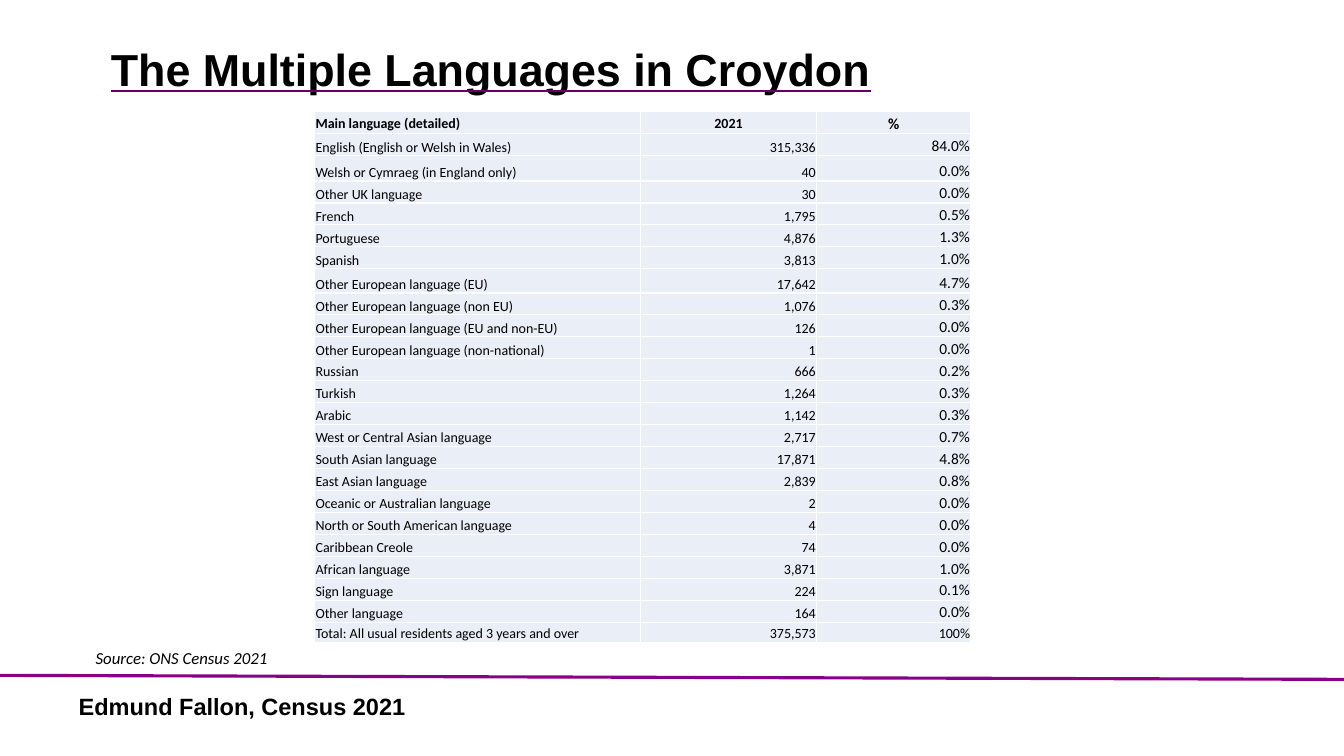
from lxml.etree import SubElement
from pptx import Presentation
from pptx.dml.color import RGBColor
from pptx.enum.shapes import MSO_CONNECTOR
from pptx.enum.text import MSO_ANCHOR as Anchor, MSO_AUTO_SIZE as AutoSize, PP_ALIGN as Align
from pptx.oxml.ns import qn
from pptx.util import Inches, Pt

COLOURS = {
    "text": "000000",
    "rule": "880088",
    "underline": "660066",
    "cell": "EAEFF7",
    "border": "FFFFFF",
}

HEADINGS = ("Main language (detailed)", "2021", "%")
LANGUAGES = [
    ("English (English or Welsh in Wales)", "315,336", "84.0%"),
    ("Welsh or Cymraeg (in England only)", "40", "0.0%"),
    ("Other UK language", "30", "0.0%"),
    ("French", "1,795", "0.5%"),
    ("Portuguese", "4,876", "1.3%"),
    ("Spanish", "3,813", "1.0%"),
    ("Other European language (EU)", "17,642", "4.7%"),
    ("Other European language (non EU)", "1,076", "0.3%"),
    ("Other European language (EU and non-EU)", "126", "0.0%"),
    ("Other European language (non-national)", "1", "0.0%"),
    ("Russian", "666", "0.2%"),
    ("Turkish", "1,264", "0.3%"),
    ("Arabic", "1,142", "0.3%"),
    ("West or Central Asian language", "2,717", "0.7%"),
    ("South Asian language", "17,871", "4.8%"),
    ("East Asian language", "2,839", "0.8%"),
    ("Oceanic or Australian language", "2", "0.0%"),
    ("North or South American language", "4", "0.0%"),
    ("Caribbean Creole", "74", "0.0%"),
    ("African language", "3,871", "1.0%"),
    ("Sign language", "224", "0.1%"),
    ("Other language", "164", "0.0%"),
]
TOTAL = ("Total: All usual residents aged 3 years and over", "375,573", "100%")

COLUMN_WIDTHS = (3.23, 1.75, 1.53)
TABLE_HEIGHT = 5.27
SPECIAL_ROW_HEIGHTS = {2: 0.25, 7: 0.24, 23: 0.2}


def colour(name):
    return RGBColor.from_string(COLOURS[name])


class SlideBuilder:
    heading_font = "Arial"
    table_font = "Calibri"

    def __init__(self, slide):
        self.slide = slide

    def add_text(self, paragraph, text, font, size, bold=False, italic=False):
        run = paragraph.add_run()
        run.text = text
        run.font.name = font
        run.font.size = Pt(size)
        run.font.bold = bold
        run.font.italic = italic
        run.font.color.rgb = colour("text")
        return run

    def place(self, placeholder, left, top, width, height):
        """Move a placeholder and return its first paragraph, left-aligned."""
        placeholder.left, placeholder.top = Inches(left), Inches(top)
        placeholder.width, placeholder.height = Inches(width), Inches(height)
        placeholder.text_frame.auto_size = AutoSize.NONE
        paragraph = placeholder.text_frame.paragraphs[0]
        paragraph.alignment = Align.LEFT
        paragraph.space_before = Pt(0)
        return paragraph

    def title(self, text, *box):
        heading = self.slide.shapes.title
        paragraph = self.place(heading, *box)
        heading.text_frame.vertical_anchor = Anchor.MIDDLE
        paragraph.line_spacing = 0.9
        run = self.add_text(paragraph, text, self.heading_font, 32, bold=True)
        run.font.underline = True
        properties = run._r.get_or_add_rPr()
        underline = SubElement(properties, qn("a:uFill"))
        fill = SubElement(underline, qn("a:solidFill"))
        SubElement(fill, qn("a:srgbClr"), val=COLOURS["underline"])
        properties.find(qn("a:latin")).addprevious(underline)

    def footer(self, text, *box):
        paragraph = self.place(self.slide.placeholders[1], *box)
        paragraph.line_spacing = 0.7
        properties = paragraph._p.get_or_add_pPr()
        properties.set("marL", "0")
        properties.set("indent", "0")
        SubElement(properties, qn("a:buNone"))
        self.add_text(paragraph, text, self.heading_font, 16.8, bold=True)

    def source(self, text, *box):
        note = self.slide.shapes.add_textbox(*map(Inches, box))
        note.text_frame.word_wrap = True
        note.text_frame.auto_size = AutoSize.SHAPE_TO_FIT_TEXT
        self.add_text(note.text_frame.paragraphs[0], text, self.table_font, 12, italic=True)

    def rule(self, *ends):
        line = self.slide.shapes.add_connector(MSO_CONNECTOR.STRAIGHT, *map(Inches, ends))
        line.line.color.rgb = colour("rule")
        line.line.width = Pt(2.25)
        SubElement(line._element.spPr, qn("a:effectLst"))

    def cell(self, cell, text, align, size, anchor, bold):
        cell.margin_left = cell.margin_right = cell.margin_top = Inches(0.01)
        cell.margin_bottom = 0
        cell.vertical_anchor = anchor
        cell.fill.solid()
        cell.fill.fore_color.rgb = colour("cell")
        properties = cell._tc.get_or_add_tcPr()
        for position, side in enumerate(("lnL", "lnR", "lnT", "lnB")):
            border = SubElement(properties, qn(f"a:{side}"), w=str(Pt(1)))
            fill = SubElement(border, qn("a:solidFill"))
            SubElement(fill, qn("a:srgbClr"), val=COLOURS["border"])
            properties.insert(position, border)
        paragraph = cell.text_frame.paragraphs[0]
        paragraph.alignment = align
        self.add_text(paragraph, text, self.table_font, size, bold=bold)

    def language_table(self, left, top):
        rows = [HEADINGS, *LANGUAGES, TOTAL]
        table = self.slide.shapes.add_table(
            len(rows), len(HEADINGS), Inches(left), Inches(top),
            Inches(sum(COLUMN_WIDTHS)), Inches(TABLE_HEIGHT)).table
        table.first_row = table.horz_banding = False
        for column, width in zip(table.columns, COLUMN_WIDTHS):
            column.width = Inches(width)

        shared_height = TABLE_HEIGHT - sum(SPECIAL_ROW_HEIGHTS.values())
        usual_height = shared_height / (len(rows) - len(SPECIAL_ROW_HEIGHTS))
        for r, values in enumerate(rows):
            table.rows[r].height = Inches(SPECIAL_ROW_HEIGHTS.get(r, usual_height))
            is_heading = r == 0
            number_align = Align.CENTER if is_heading else Align.RIGHT
            for c, text in enumerate(values):
                is_percent = c == 2
                self.cell(
                    table.cell(r, c), text,
                    align=number_align if c else Align.LEFT,
                    size=11 if is_percent and values is not TOTAL else 10,
                    anchor=Anchor.MIDDLE if is_heading and not is_percent else Anchor.BOTTOM,
                    bold=is_heading)


def main():
    deck = Presentation()
    deck.slide_width, deck.slide_height = Inches(13.33), Inches(7.5)
    builder = SlideBuilder(deck.slides.add_slide(deck.slide_layouts[1]))
    builder.rule(0, 6.7, 13.33, 6.74)
    builder.footer("Edmund Fallon, Census 2021", 0.68, 6.89, 3.87, 0.47)
    builder.title("The Multiple Languages in Croydon", 1, 0.25, 11.5, 0.92)
    builder.source("Source: ONS Census 2021", 0.85, 6.38, 2.18, 0.3)
    builder.language_table(3.12, 1.11)
    deck.save("out.pptx")


if __name__ == "__main__":
    main()
